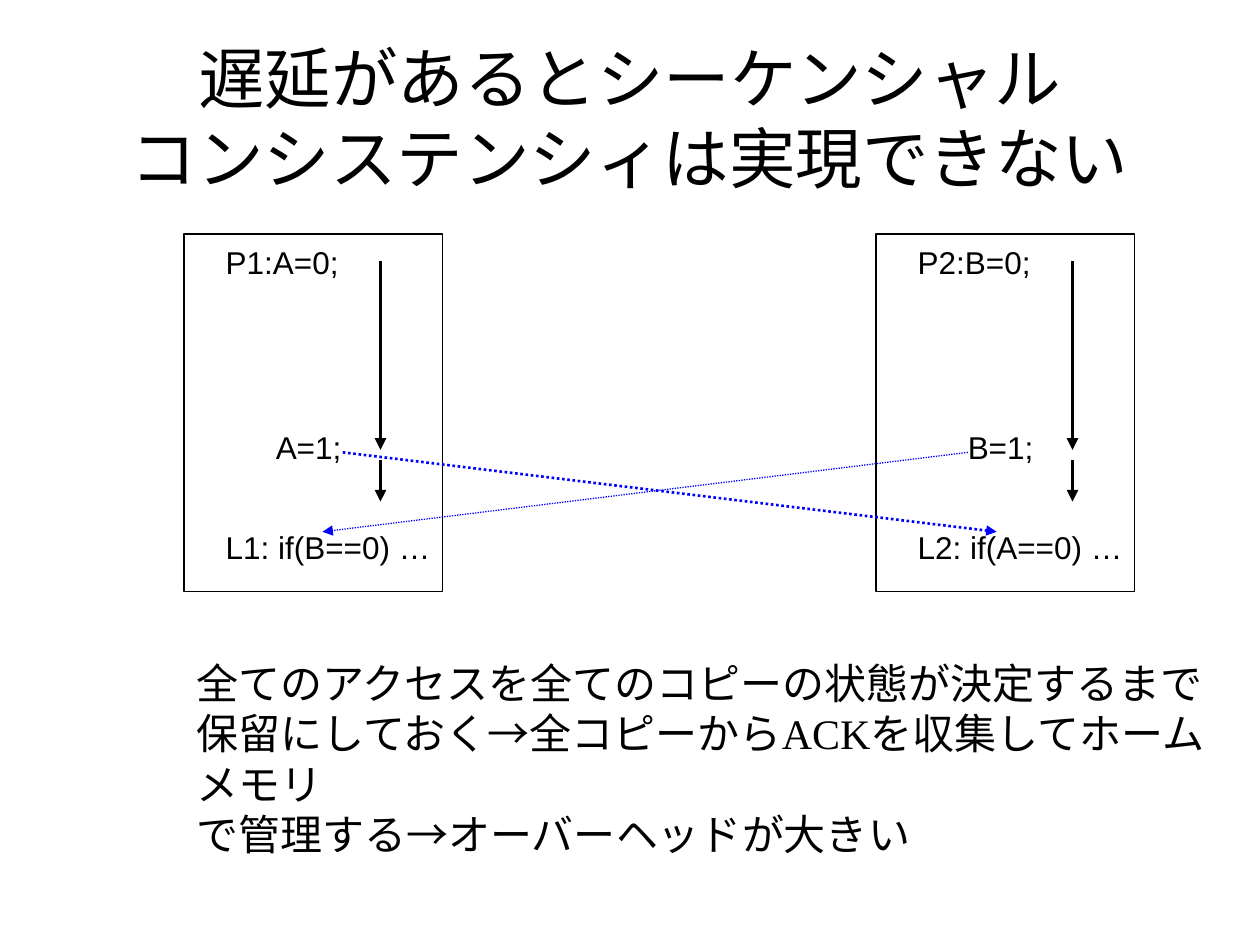
from lxml import etree
from pptx import Presentation, util as u
from pptx.dml.color import RGBColor
from pptx.enum import dml, shapes, text
from pptx.oxml.ns import qn

BLACK, BLUE = "000000", "0000FF"


def add_text(left, top, width, height, lines, size, font="Arial", wrap=False,
             align=text.PP_ALIGN.LEFT, anchor=text.MSO_ANCHOR.TOP):
    box = slide.shapes.add_textbox(u.Cm(left), u.Cm(top), u.Cm(width), u.Cm(height))
    frame = box.text_frame
    frame.word_wrap = wrap
    frame.vertical_anchor = anchor
    frame.text = lines
    for paragraph in frame.paragraphs:
        paragraph.alignment = align
        paragraph.font.size = u.Pt(size)
        paragraph.font.name = font
        paragraph.font.color.rgb = RGBColor.from_string(BLACK)


def add_arrow(x1, y1, x2, y2, color, width, dash=None):
    arrow = slide.shapes.add_connector(
        shapes.MSO_CONNECTOR.STRAIGHT, u.Cm(x1), u.Cm(y1), u.Cm(x2), u.Cm(y2))
    arrow.line.color.rgb = RGBColor.from_string(color)
    arrow.line.width = u.Pt(width)
    if dash:
        arrow.line.dash_style = dash
    etree.SubElement(arrow.line._get_or_add_ln(), qn("a:tailEnd"), type="triangle")
    etree.SubElement(arrow._element.spPr, qn("a:effectLst"))


presentation = Presentation()
presentation.slide_width, presentation.slide_height = u.Cm(25.4), u.Cm(19.05)
slide = presentation.slides.add_slide(presentation.slide_layouts[6])

# Title
add_text(1.27, 0.76, 22.86, 3.18, "遅延があるとシーケンシャル\vコンシステンシィは実現できない", 38,
         wrap=True, align=text.PP_ALIGN.CENTER, anchor=text.MSO_ANCHOR.MIDDLE)

# Conclusion
add_text(3.71, 13.13, 21.41, 3.33,
         "全てのアクセスを全てのコピーの状態が決定するまで\n"
         "保留にしておく→全コピーからACKを収集してホームメモリ\n"
         "で管理する→オーバーヘッドが大きい", 24, font="Times New Roman", wrap=True)

# The two processors: frame, program order and code
processors = [
    (3.71, "P1:A=0;", "A=1;", "L1: if(B==0) …"),
    (17.66, "P2:B=0;", "B=1;", "L2: if(A==0) …"),
]
for left, start, write, check in processors:
    frame_box = slide.shapes.add_shape(
        shapes.MSO_SHAPE.RECTANGLE, u.Cm(left), u.Cm(4.72), u.Cm(5.21), u.Cm(7.21))
    frame_box.shadow.inherit = False
    frame_box.fill.background()
    frame_box.line.color.rgb = RGBColor.from_string(BLACK)
    frame_box.line.width = u.Pt(0.75)

    for top, bottom in [(5.26, 9.07), (9.27, 10.11)]:
        add_arrow(left + 3.96, top, left + 3.96, bottom, BLACK, 2.25)

    add_text(left + 0.59, 4.78, 2.79, 1.02, start, 18)
    add_text(left + 1.6, 8.51, 1.83, 1.02, write, 18)
    add_text(left + 0.59, 10.52, 4.65, 1.02, check, 18)

# Delayed writes reaching the other processor
dotted = dml.MSO_LINE.ROUND_DOT
add_arrow(6.91, 9.12, 20.09, 10.72, BLUE, 1.5, dotted)
add_arrow(19.51, 9.12, 6.5, 10.72, BLUE, 0.75, dotted)

presentation.save("out.pptx")
